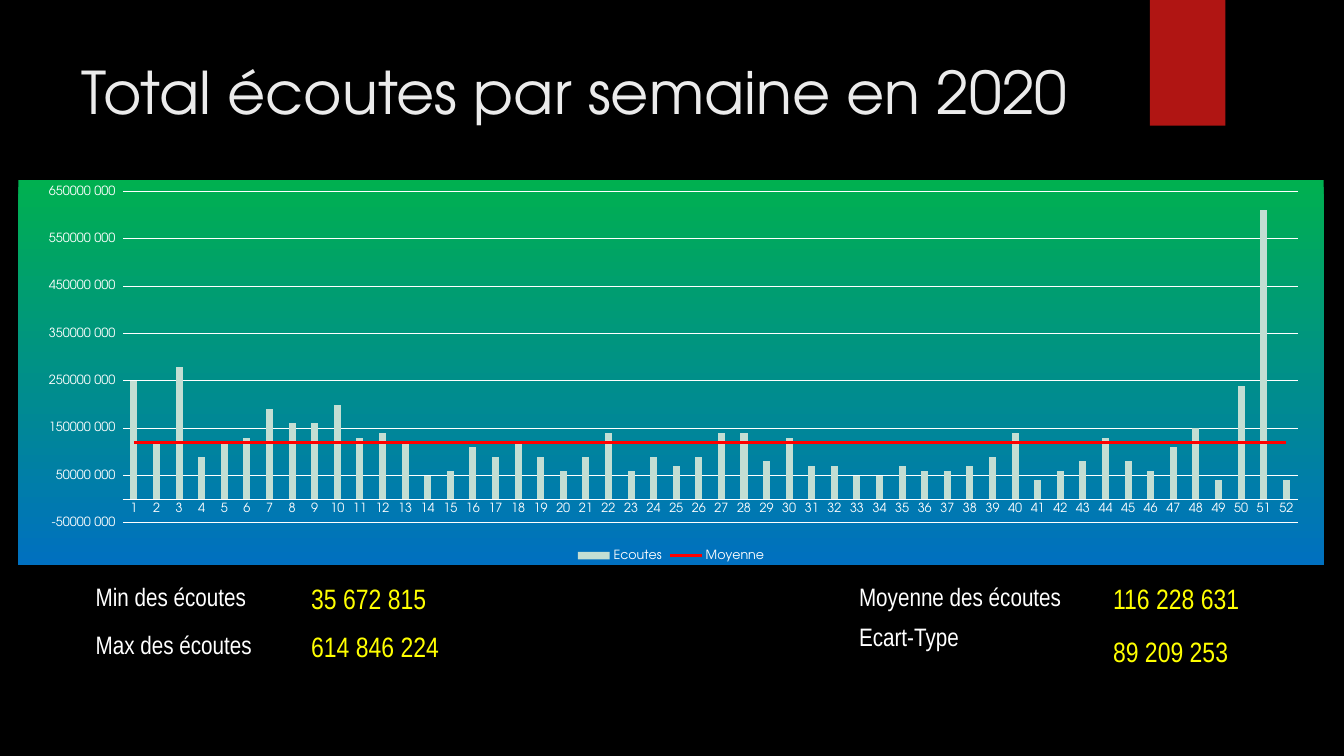
from collections import namedtuple
from dataclasses import dataclass

from lxml import etree
from pptx import Presentation
from pptx.chart.data import CategoryChartData as Data
from pptx.dml.color import RGBColor as Rgb
from pptx.enum.chart import XL_CHART_TYPE as Kind
from pptx.enum.chart import XL_LEGEND_POSITION as Place
from pptx.enum.chart import XL_TICK_MARK as Tick
from pptx.enum.shapes import MSO_SHAPE as Form
from pptx.enum.text import MSO_ANCHOR as Anchor
from pptx.enum.text import PP_ALIGN as Align
from pptx.oxml import parse_xml
from pptx.oxml.ns import nsdecls, qn
from pptx.util import Cm, Pt

Box = namedtuple("Box", "left top width height")


@dataclass(frozen=True)
class Theme:
    back: str = "000000"
    flag: str = "B01513"
    head: str = "EBEBEB"
    text: str = "FFFFFF"
    value: str = "FFFF00"
    bar: str = "C3DED3"
    mean: str = "FF0000"
    high: str = "00B050"
    low: str = "0070C0"
    round: str = "TeX Gyre Adventor"
    narrow: str = "Arial Narrow"
    title: int = 42
    label: int = 18
    figure: int = 20
    axis: int = 9
    chart: int = 10


THEME = Theme()
MILLION = 1_000_000
WEEKS = [
    250, 120, 280, 90, 120, 130, 190, 160, 160, 200, 130, 140, 120,
    50, 60, 110, 90, 120, 90, 60, 90, 140, 60, 90, 70, 90,
    140, 140, 80, 130, 70, 70, 50, 50, 70, 60, 60, 70, 90,
    140, 40, 60, 80, 130, 80, 60, 110, 150, 40, 240, 610, 40,
]
MEAN = 120
FORMAT = r'_-* #\ ##0_-;\-* #\ ##0_-;_-* "-"??_-;_-'


def apply(item, values):
    for name, value in values.items():
        setattr(item, name, value)


def paint(fill, color):
    fill.solid()
    fill.fore_color.rgb = Rgb.from_string(color)


def style(font, face, size, color):
    apply(font, {"name": face, "size": Pt(size), "bold": False})
    font.color.rgb = Rgb.from_string(color)


def stroke(line, color, width):
    paint(line.fill, color)
    line.width = Pt(width)


def spread(box):
    return [Cm(side) for side in box]


def write(frame, text, face, size, color, inset=0.25):
    apply(frame, {
        "text": text,
        "word_wrap": True,
        "vertical_anchor": Anchor.TOP,
        "margin_left": Cm(inset),
    })
    line = frame.paragraphs[0]
    line.alignment = Align.LEFT
    style(line.runs[0].font, face, size, color)


def header(slide, box):
    flag = slide.shapes.add_shape(
        Form.RECTANGLE, *spread((box.left + 27.18, 0, 1.9, 3.17)))
    flag.shadow.inherit = False
    paint(flag.fill, THEME.flag)
    flag.line.fill.background()
    title = slide.shapes.title
    sides = ("left", "top", "width", "height")
    apply(title, dict(zip(sides, spread(box))))
    write(title.text_frame, "Total écoutes par semaine en 2020",
          THEME.round, THEME.title, THEME.head)


def shade(chart):
    stops = "".join(
        f'<a:gs pos="{pos}"><a:srgbClr val="{color}"/></a:gs>'
        for pos, color in ((0, THEME.high), (100000, THEME.low)))
    chart.element.find(qn("c:chart")).addnext(parse_xml(
        f'<c:spPr {nsdecls("c", "a")}><a:gradFill><a:gsLst>{stops}</a:gsLst>'
        '<a:lin ang="5400000" scaled="0"/></a:gradFill>'
        '<a:ln><a:noFill/></a:ln></c:spPr>'))


def place(chart, box):
    area = chart.element.find(".//" + qn("c:plotArea"))
    for old in area.findall(qn("c:layout")):
        area.remove(old)
    sides = "".join(f'<c:{name} val="{value}"/>'
                    for name, value in zip("xywh", box))
    area.insert(0, parse_xml(
        f'<c:layout {nsdecls("c")}><c:manualLayout>'
        '<c:layoutTarget val="inner"/><c:xMode val="edge"/>'
        f'<c:yMode val="edge"/>{sides}</c:manualLayout></c:layout>'))


def overlay(chart):
    bars = chart.element.find(".//" + qn("c:barChart"))
    mean = bars.findall(qn("c:ser"))[1]
    for old in mean.findall(qn("c:invertIfNegative")):
        mean.remove(old)
    group = parse_xml(
        f'<c:lineChart {nsdecls("c")}><c:grouping val="standard"/>'
        '<c:varyColors val="0"/><c:marker val="1"/></c:lineChart>')
    group.insert(2, mean)
    for axis in bars.findall(qn("c:axId")):
        etree.SubElement(group, qn("c:axId"), val=axis.get("val"))
    bars.addnext(group)
    line = chart.plots[1].series[0]
    line.smooth = False
    line.marker.style = None
    stroke(line.format.line, THEME.mean, 2.25)
    mean.find(qn("c:marker")).append(
        parse_xml(f'<c:symbol {nsdecls("c")} val="none"/>'))


def graph(slide, box):
    data = Data()
    data.categories = [str(week + 1) for week in range(len(WEEKS))]
    data.add_series("Ecoutes", [value * MILLION for value in WEEKS])
    data.add_series("Moyenne", [MEAN * MILLION] * len(WEEKS))
    chart = slide.shapes.add_chart(
        Kind.COLUMN_CLUSTERED, *spread(box), data).chart
    apply(chart, {"has_title": False, "has_legend": True})
    style(chart.font, THEME.round, THEME.chart, THEME.text)
    apply(chart.legend,
          {"position": Place.BOTTOM, "include_in_layout": False})
    style(chart.legend.font, THEME.round, THEME.axis, THEME.text)

    plot = chart.plots[0]
    apply(plot, {"gap_width": 219, "overlap": -27,
                 "vary_by_categories": False})
    paint(plot.series[0].format.fill, THEME.bar)
    weeks, scale = chart.category_axis, chart.value_axis
    for axis in (weeks, scale):
        apply(axis, {"major_tick_mark": Tick.NONE,
                     "minor_tick_mark": Tick.NONE})
        style(axis.tick_labels.font, THEME.round, THEME.axis, THEME.text)
    stroke(weeks.format.line, THEME.text, 0.75)
    apply(scale, {
        "minimum_scale": -50 * MILLION,
        "maximum_scale": 650 * MILLION,
        "major_unit": 100 * MILLION,
        "has_major_gridlines": True,
    })
    scale.format.line.fill.background()
    stroke(scale.major_gridlines.format.line, THEME.text, 0.75)
    apply(scale.tick_labels,
          {"number_format": FORMAT, "number_format_is_linked": False})
    overlay(chart)
    shade(chart)
    place(chart, (0.08, 0.03, 0.9, 0.86))


def stats(slide, box, gap, rows):
    for label, drop, value, fall in rows:
        cells = (
            (label, 0, drop, gap, THEME.label, THEME.text, 0.25),
            (value, gap, fall, box.width - gap,
             THEME.figure, THEME.value, 0.4),
        )
        for text, left, top, width, size, color, inset in cells:
            cell = slide.shapes.add_textbox(*spread(
                (box.left + left, box.top + top, width, 1.1)))
            write(cell.text_frame, text, THEME.narrow, size, color, inset)


def main():
    deck = Presentation()
    apply(deck, {"slide_width": Cm(33.87), "slide_height": Cm(19.05)})
    slide = deck.slides.add_slide(deck.slide_layouts[5])
    paint(slide.background.fill, THEME.back)
    header(slide, Box(1.8, 1.27, 26.14, 3.89))
    graph(slide, Box(0.46, 4.53, 32.9, 9.72))
    stats(slide, Box(2.16, 14.53, 10.6, 2.3), 5.28, (
        ("Min des écoutes", 0, "35 672 815", 0),
        ("Max des écoutes", 1.2, "614 846 224", 1.2),
    ))
    stats(slide, Box(21.4, 14.53, 12, 2.4), 6.25, (
        ("Moyenne des écoutes", 0, "116 228 631", 0),
        ("Ecart-Type", 1, "89 209 253", 1.33),
    ))
    deck.save("out.pptx")


if __name__ == "__main__":
    main()
